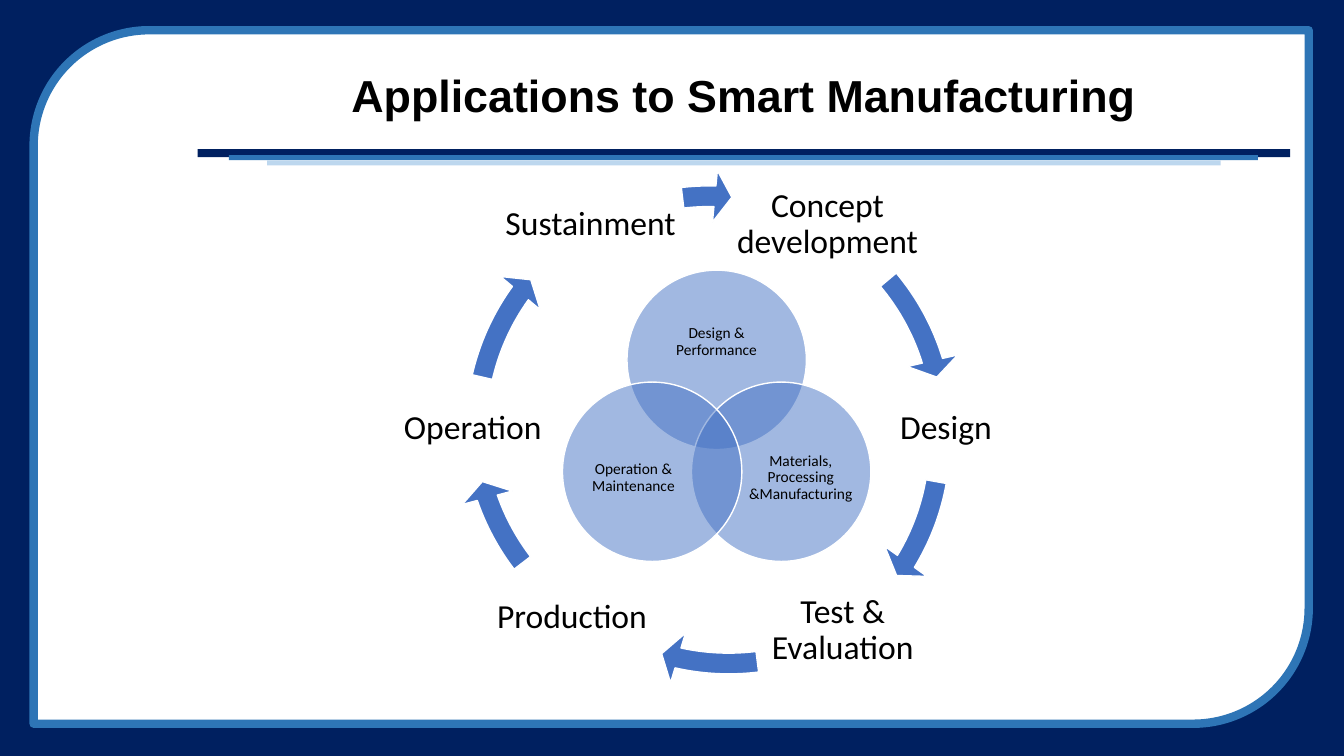
import pptx
import pptx.dml.color
import pptx.enum.shapes
import pptx.enum.text
import pptx.oxml.ns
import pptx.util
from lxml import etree

Pt = pptx.util.Pt
SHAPES = pptx.enum.shapes.MSO_SHAPE

NAVY, BLUE, PALE, ACCENT = "002060", "2E75B6", "BDD7EE", "4472C4"
WHITE, BLACK = "FFFFFF", "000000"

# Left, top, width, colour and height of the stacked rules under the title
RULES = [
    (141.12, 106.56, 780.48, 5.76, NAVY),
    (163.44, 110.88, 735.12, 3.6, BLUE),
    (190.8, 114.48, 681.12, 3.6, PALE),
]

# Circle left and top, then the box of its label
CIRCLE_SIZE = 128.16
CIRCLES = [
    ("Design & Performance", 447.84, 192.96, (465.12, 215.28, 93.6, 57.6)),
    ("Materials, Processing &Manufacturing", 493.92, 272.88, (533.52, 306, 77.04, 70.56)),
    ("Operation & Maintenance", 401.76, 272.88, (414, 306, 77.04, 70.56)),
]

# Label left, top, width; then arrow left, top, start and end angle in degrees
STAGE_HEIGHT = 75.6
RING_SIZE = 370.08
STAGES = [
    ("Concept development", (522.72, 122.4, 136.8), (321.84, 121.68, 320.06, 342.88)),
    ("Design", (637.92, 268.56, 75.6), (319.68, 129.6, 10.17, 31.24)),
    ("Test & Evaluation", (541.44, 412.56, 120.96), (335.52, 122.4, 82.95, 102.56)),
    ("Production", (344.88, 403.2, 127.44), (320.4, 115.92, 142.6, 160.85)),
    ("Operation", (272.16, 268.56, 131.04), (321.84, 121.68, 192.95, 215.76)),
    ("Sustainment", (357.12, 122.4, 129.6), (321.84, 121.68, 263.34, 271.31)),
]


def rgb(value):
    return pptx.dml.color.RGBColor.from_string(value)


def set_all(obj, values):
    for name, value in values.items():
        setattr(obj, name, value)


def add_shape(s, kind, box, fill, line=None, weight=1, alpha=None):
    sp = s.shapes.add_shape(kind, *map(Pt, box))
    sp.shadow.inherit = False
    sp.fill.solid()
    sp.fill.fore_color.rgb = rgb(fill)
    if alpha is not None:
        clr = sp.fill._xPr.find(".//" + pptx.oxml.ns.qn("a:srgbClr"))
        etree.SubElement(clr, pptx.oxml.ns.qn("a:alpha"), val=str(alpha * 1000))
    if line:
        sp.line.color.rgb = rgb(line)
        sp.line.width = Pt(weight)
    else:
        sp.line.fill.background()
    return sp


def add_label(s, text, box, size, font="Calibri", bold=False, inset=0):
    tf = s.shapes.add_textbox(*map(Pt, box)).text_frame
    set_all(tf, {"word_wrap": True,
                 "vertical_anchor": pptx.enum.text.MSO_ANCHOR.MIDDLE})
    set_all(tf, {"margin_" + side: Pt(inset)
                 for side in ("left", "top", "right", "bottom")})
    p = tf.paragraphs[0]
    set_all(p, {"alignment": pptx.enum.text.PP_ALIGN.CENTER, "line_spacing": 0.9})
    r = p.add_run()
    r.text = text
    set_all(r.font, {"name": font, "size": Pt(size), "bold": bold})
    r.font.color.rgb = rgb(BLACK)


def add_ring_arrow(s, left, top, start, end):
    sp = add_shape(s, SHAPES.CIRCULAR_ARROW, (left, top, RING_SIZE, RING_SIZE),
                   ACCENT, WHITE)
    # Angles are stored as 60000ths of a degree, scaled here by 100000
    for i, value in enumerate((0.04, 2.5, end * 0.6, start * 0.6, 0.05)):
        sp.adjustments[i] = value


def main():
    prs = pptx.Presentation()
    set_all(prs, {"slide_width": Pt(960), "slide_height": Pt(540)})
    s = prs.slides.add_slide(prs.slide_layouts[6])

    # Frame
    add_shape(s, SHAPES.RECTANGLE, (0, 0, 960, 540), NAVY)
    add_shape(s, SHAPES.ROUND_2_DIAG_RECTANGLE, (24, 21.6, 910.8, 495.36),
              WHITE, BLUE, 6)

    # Title and rules
    for *box, color in RULES:
        add_shape(s, SHAPES.RECTANGLE, box, color)
    add_label(s, "Applications to Smart Manufacturing",
              (141.12, 35.28, 780.48, 69.84), 32, "Arial", True, 3.6)

    # Overlapping circles
    for text, left, top, box in CIRCLES:
        add_shape(s, SHAPES.OVAL, (left, top, CIRCLE_SIZE, CIRCLE_SIZE),
                  ACCENT, WHITE, alpha=50)
        add_label(s, text, box, 11)

    # Life cycle ring
    for text, box, arrow in STAGES:
        add_label(s, text, (*box, STAGE_HEIGHT), 24, inset=2.16)
        add_ring_arrow(s, *arrow)

    prs.save("out.pptx")


if __name__ == "__main__":
    main()
